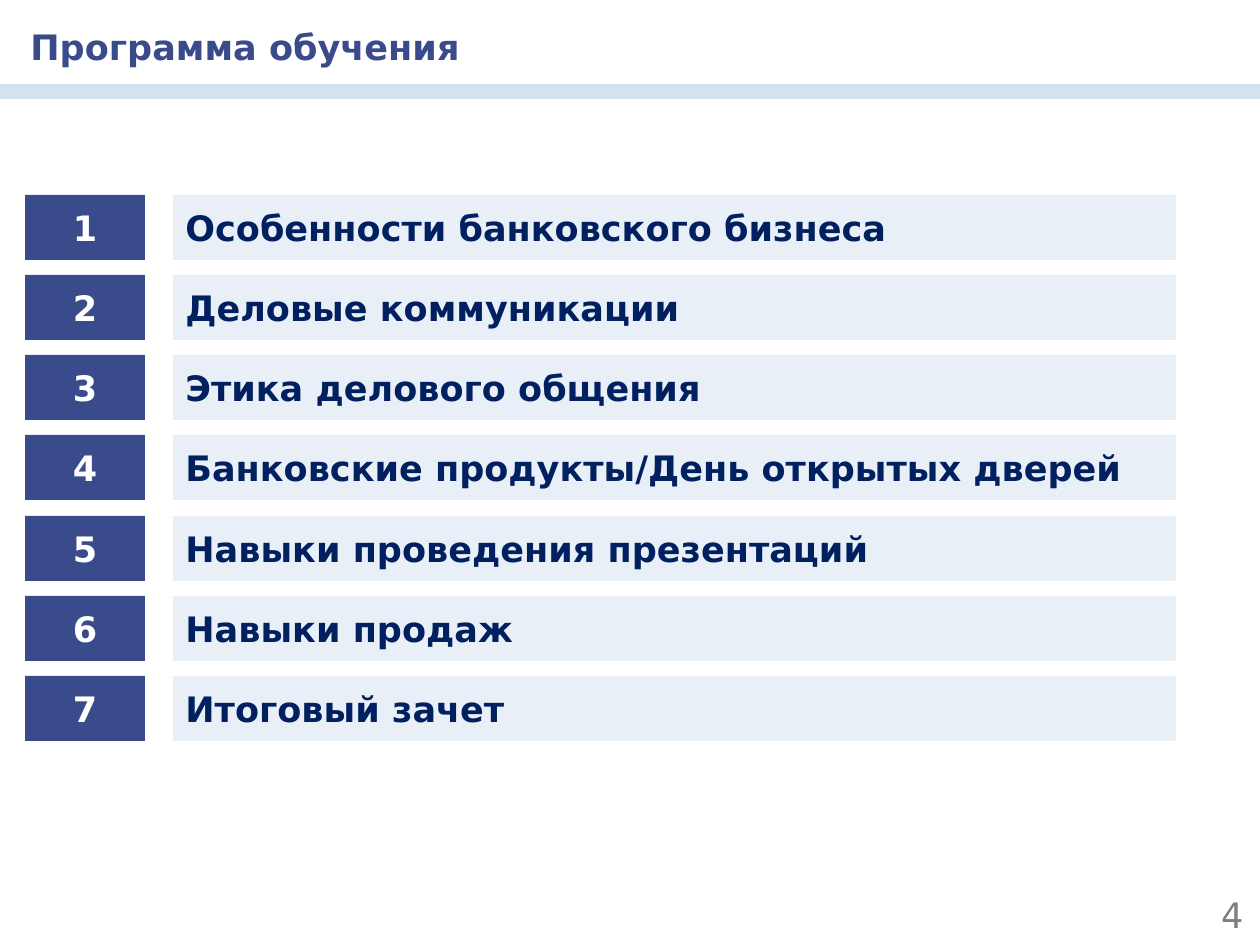
from lxml.etree import SubElement
from pptx import Presentation
from pptx.dml.color import RGBColor
from pptx.enum.shapes import MSO_SHAPE
from pptx.enum.text import MSO_ANCHOR, PP_ALIGN
from pptx.oxml.ns import qn
from pptx.util import Pt

PX = 914400 // 126
FONT = "DejaVu Sans"
INDIGO, PALE_BLUE, NAVY, GREY, WHITE = "3A4B8C", "D4E1F0", "002060", "7F7F7F", "FFFFFF"

TOPICS = [
    "Особенности банковского бизнеса",
    "Деловые коммуникации",
    "Этика делового общения",
    "Банковские продукты/День открытых дверей",
    "Навыки проведения презентаций",
    "Навыки продаж",
    "Итоговый зачет",
]


def px(*lengths):
    return [length * PX for length in lengths]


def set_color(target, color):
    target.rgb = RGBColor.from_string(color)


def write(shape, text, color, align=PP_ALIGN.LEFT, bold=True, anchor=MSO_ANCHOR.MIDDLE):
    frame = shape.text_frame
    frame.word_wrap = True
    frame.vertical_anchor = anchor
    paragraph = frame.paragraphs[0]
    paragraph.text = text
    paragraph.alignment = align
    paragraph.font.name = FONT
    paragraph.font.size = Pt(20)
    paragraph.font.bold = bold
    set_color(paragraph.font.color, color)


def add_block(shapes, box, color, opacity=100):
    block = shapes.add_shape(MSO_SHAPE.RECTANGLE, *px(*box))
    block.shadow.inherit = False
    block.line.fill.background()
    block.fill.solid()
    set_color(block.fill.fore_color, color)
    if opacity < 100:
        fill_color = block.fill._xPr.find(qn("a:solidFill"))[0]
        SubElement(fill_color, qn("a:alpha"), val=str(opacity * 1000))
    return block


def add_header(slide, left, top, width, height):
    """Title above a full-width rule that closes the header."""
    rule_height = 15
    add_block(slide.shapes, (left, top + height - rule_height, width, rule_height), PALE_BLUE)
    title = slide.shapes.add_textbox(*px(left + 18, top + 19, 1070, 55))
    write(title, "Программа обучения", INDIGO, anchor=MSO_ANCHOR.TOP)


def add_topic(slide, number, topic, left, top, width, height):
    """Grouped row: the topic bar and its number tile."""
    tile_width, gap = 120, 28
    bar_offset = tile_width + gap
    row = slide.shapes.add_group_shape().shapes
    bar = add_block(row, (left + bar_offset, top, width - bar_offset, height), PALE_BLUE, 50)
    write(bar, topic, NAVY)
    tile = add_block(row, (left, top, tile_width, height), INDIGO)
    write(tile, str(number), WHITE, PP_ALIGN.CENTER)


def add_program(slide, left, top, width, height):
    """Topics spread evenly over the height of the box."""
    row_height = 65
    pitch = (height - row_height) / (len(TOPICS) - 1)
    for index, topic in enumerate(TOPICS):
        row_top = top + round(index * pitch)
        add_topic(slide, index + 1, topic, left, row_top, width, row_height)


def add_page_number(slide, left, top, width, height):
    number = slide.shapes.add_textbox(*px(left, top, width, height))
    write(number, "4", GREY, PP_ALIGN.RIGHT, bold=False)


def main():
    presentation = Presentation()
    presentation.slide_width, presentation.slide_height = px(1260, 945)
    slide = presentation.slides.add_slide(presentation.slide_layouts[6])
    add_header(slide, 0, 0, 1260, 99)
    add_page_number(slide, 963, 898, 293, 34)
    add_program(slide, 25, 195, 1151, 546)
    presentation.save("out.pptx")


if __name__ == "__main__":
    main()
